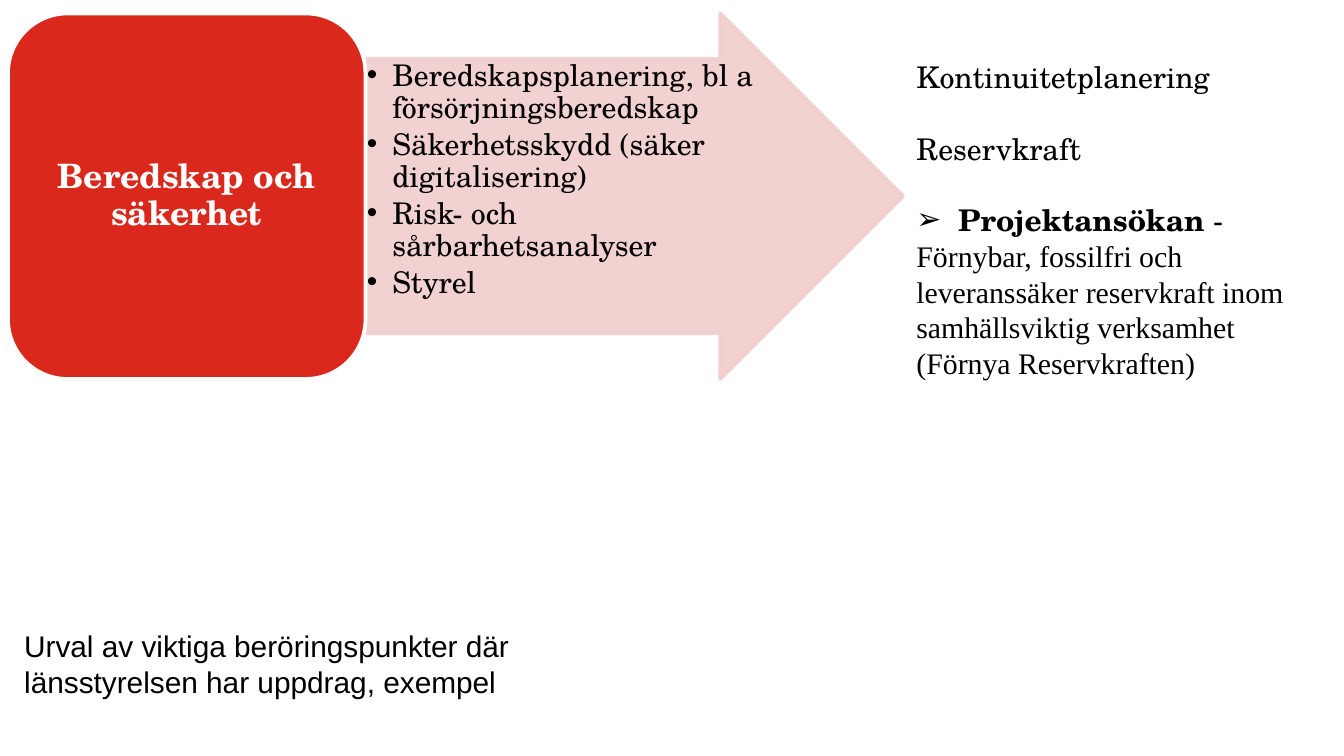
import pptx
import pptx.dml.color
import pptx.enum.shapes
import pptx.enum.text
import pptx.oxml
import pptx.oxml.ns
import pptx.util
from lxml import etree

Inches, Pt = pptx.util.Inches, pptx.util.Pt
SHAPES = pptx.enum.shapes.MSO_SHAPE
ALIGN = pptx.enum.text.PP_ALIGN
ANCHOR = pptx.enum.text.MSO_ANCHOR

COLOURS = {"red": "DA291C", "pink": "F1CDCD", "white": "FFFFFF", "black": "000000"}
SERIF, TIMES, SANS = "TeX Gyre Schola", "Times New Roman", "Arial"

AREA = "Beredskap och säkerhet"
TASKS = [
    "Beredskapsplanering, bl a försörjningsberedskap",
    "Säkerhetsskydd (säker digitalisering)",
    "Risk- och sårbarhetsanalyser",
    "Styrel",
]
TOPICS = ["Kontinuitetplanering", "Reservkraft"]
PROJECT = ("Projektansökan", " -")
PROJECT_TEXT = ("Förnybar, fossilfri och leveranssäker reservkraft inom "
                "samhällsviktig verksamhet (Förnya Reservkraften)")
CAPTION = "Urval av viktiga beröringspunkter där länsstyrelsen har uppdrag, exempel"

WIDTH = 10
HEIGHT = WIDTH * 9 / 16
BAND_TOP, BAND_HEIGHT = 0.1, 2.72
AREA_LEFT, AREA_WIDTH, ARROW_WIDTH = 0.06, 2.66, 4
ARROW_LEFT = AREA_LEFT + AREA_WIDTH
TOPICS_LEFT = ARROW_LEFT + ARROW_WIDTH
BLANK_LINE = 19


def rgb(name):
    return pptx.dml.color.RGBColor.from_string(COLOURS[name])


def set_frame(shape, insets, anchor=ANCHOR.TOP):
    """Prepare a wrapping text frame; insets are (horizontal, vertical) inches."""
    frame = shape.text_frame
    frame.word_wrap = True
    frame.auto_size = pptx.enum.text.MSO_AUTO_SIZE.NONE
    frame.vertical_anchor = anchor
    frame.margin_left = frame.margin_right = Inches(insets[0])
    frame.margin_top = frame.margin_bottom = Inches(insets[1])
    return frame


def add_text(frame, text, size=16, font=SERIF, colour="black", bold=False, align=ALIGN.LEFT,
             bullet=None, indent=0, line=1.0, before=0, after=0):
    """Fill the first empty paragraph or append one; a tuple is a bold lead and its rest."""
    paragraph = frame.paragraphs[0]
    if paragraph.runs:
        paragraph = frame.add_paragraph()
    paragraph.alignment = align
    paragraph.line_spacing = line
    paragraph.space_before, paragraph.space_after = Pt(before), Pt(after)
    properties = paragraph._p.get_or_add_pPr()
    properties.set("marL", str(Inches(indent)))
    properties.set("indent", str(-Inches(indent)))
    if bullet:
        etree.SubElement(properties, pptx.oxml.ns.qn("a:buFont")).set("typeface", SANS)
        etree.SubElement(properties, pptx.oxml.ns.qn("a:buChar")).set("char", bullet)
    else:
        etree.SubElement(properties, pptx.oxml.ns.qn("a:buNone"))
    parts = [(text, bold)] if isinstance(text, str) else [(text[0], True), (text[1], False)]
    for words, is_bold in parts:
        run = paragraph.add_run()
        run.text = words
        run.font.size, run.font.name, run.font.bold = Pt(size), font, is_bold
        run.font.color.rgb = rgb(colour)


def add_block(slide, kind, left, width, fill, line, opacity=None):
    block = slide.shapes.add_shape(kind, Inches(left), Inches(BAND_TOP),
                                   Inches(width), Inches(BAND_HEIGHT))
    block.shadow.inherit = False
    block.fill.solid()
    block.fill.fore_color.rgb = rgb(fill)
    block.line.color.rgb = rgb(line)
    block.line.width = Pt(2)
    if opacity:
        for colour in block._element.spPr.iter(pptx.oxml.ns.qn("a:srgbClr")):
            etree.SubElement(colour, pptx.oxml.ns.qn("a:alpha")).set("val", str(opacity * 1000))
    return block


def main():
    deck = pptx.Presentation()
    deck.slide_width, deck.slide_height = Inches(WIDTH), Inches(HEIGHT)
    slide = deck.slides.add_slide(deck.slide_layouts[1])
    title = slide.shapes.title._element
    title.getparent().remove(title)

    caption = slide.placeholders[1]
    caption.left, caption.top = Inches(0.18), Inches(4.67)
    caption.width, caption.height = Inches(4.11), Inches(0.74)
    add_text(set_frame(caption, (0, 0)), CAPTION, font=SANS)

    arrow = add_block(slide, SHAPES.RIGHT_ARROW, ARROW_LEFT, ARROW_WIDTH, "pink", "pink", 90)
    arrow.adjustments[0], arrow.adjustments[1] = 0.75, 0.5
    tasks = set_frame(arrow, (0.01, 0.01))
    for task in TASKS:
        add_text(tasks, task, bullet="•", indent=0.19, line=0.9, after=2.4)

    area = add_block(slide, SHAPES.ROUNDED_RECTANGLE, AREA_LEFT, AREA_WIDTH, "red", "white")
    add_text(set_frame(area, (0.07, 0.04), ANCHOR.MIDDLE), AREA, size=18, colour="white",
             bold=True, align=ALIGN.CENTER, line=0.9)

    topics_box = slide.shapes.add_textbox(Inches(TOPICS_LEFT), Inches(0.39),
                                          Inches(WIDTH - TOPICS_LEFT), Inches(2.83))
    topics = set_frame(topics_box, (0.1, 0.05))
    for number, topic in enumerate(TOPICS):
        add_text(topics, topic, before=BLANK_LINE if number else 0)
    add_text(topics, PROJECT, bullet="➢", indent=0.31, before=BLANK_LINE)
    add_text(topics, PROJECT_TEXT, font=TIMES)

    deck.save("out.pptx")


if __name__ == "__main__":
    main()
